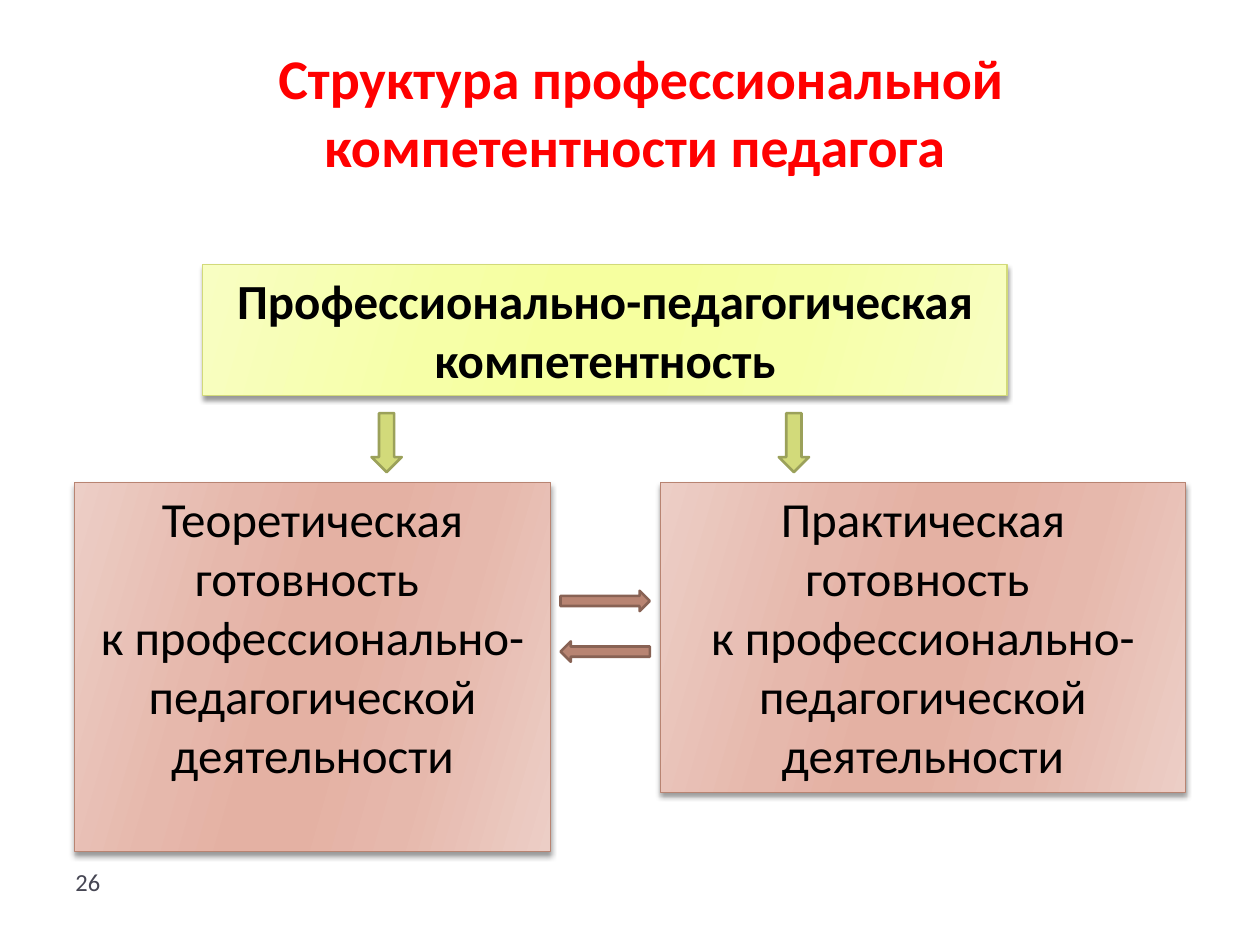
from lxml import etree
from pptx import Presentation
from pptx.dml.color import RGBColor
from pptx.enum.shapes import MSO_SHAPE
from pptx.enum.text import MSO_ANCHOR, MSO_AUTO_SIZE, PP_ALIGN
from pptx.oxml import parse_xml
from pptx.oxml.ns import qn
from pptx.util import Cm, Pt

RECT, DOWN, RIGHT = MSO_SHAPE.RECTANGLE, MSO_SHAPE.DOWN_ARROW, MSO_SHAPE.RIGHT_ARROW
TOP, MIDDLE = MSO_ANCHOR.TOP, MSO_ANCHOR.MIDDLE
LEFT, CENTER = PP_ALIGN.LEFT, PP_ALIGN.CENTER
NS = "http://schemas.openxmlformats.org/drawingml/2006/main"

COLORS = {
    "title": "FF0000", "text": "000000", "number": "464653",
    "lime": "D2DA7A", "lime_edge": "9BA15A",
    "clay": "B88472", "clay_edge": "886254",
}
# Gradient colours from the edge to the middle
FADES = {
    "lime": ["F8FEC2", "F6FFA7", "F6FF9F"],
    "clay": ["ECCEC6", "E6B8AC", "E4B1A3"],
}
STOPS = [0, 30, 45, 55, 73, 100]
SHADOW = (f'<a:outerShdw xmlns:a="{NS}" blurRad="38100" dist="25400" dir="5400000" '
          'rotWithShape="0"><a:srgbClr val="000000"><a:alpha val="40000"/>'
          '</a:srgbClr></a:outerShdw>')


def write(shape, text, size=28, color="text", bold=False, align=CENTER, anchor=TOP):
    frame = shape.text_frame
    frame.word_wrap = True
    frame.auto_size = MSO_AUTO_SIZE.NONE
    frame.vertical_anchor = anchor
    frame.text = text
    for para in frame.paragraphs:
        para.alignment = align
        font = para.runs[0].font
        font.name, font.size, font.bold = "Calibri", Pt(size), bold
        font.color.rgb = RGBColor.from_string(COLORS[color])


def draw(kind, place, edge, width):
    shape = slide.shapes.add_shape(kind, *[Cm(n) for n in place])
    shape.shadow.inherit = False
    shape.line.color.rgb = RGBColor.from_string(COLORS[edge])
    shape.line.width = Pt(width)
    return shape


prs = Presentation()
prs.slide_width, prs.slide_height = Cm(25.4), Cm(19.05)
slide = prs.slides.add_slide(prs.slide_layouts[5])

# Title
title = slide.shapes.title
title.left, title.top, title.width, title.height = Cm(1.3), Cm(0.74), Cm(23), Cm(3)
write(title, " Структура профессиональной компетентности педагога",
      size=32, color="title", bold=True, anchor=MIDDLE)

# Boxes with gradient and shadow
ready = " готовность \nк профессионально-педагогической деятельности"
boxes = [
    ("Профессионально-педагогическая компетентность", (4.09, 5.33, 16.21, 2.64), "lime", True),
    ("Теоретическая" + ready, (1.5, 9.73, 9.6, 7.44), "clay", False),
    ("Практическая" + ready, (13.31, 9.73, 10.59, 6.25), "clay", False),
]
for text, place, tone, bold in boxes:
    box = draw(RECT, place, tone, 0.75)
    box.fill.gradient()
    box.fill.gradient_angle = 344
    props = box._element.spPr
    stops = props.find(".//" + qn("a:gsLst"))
    for old in list(stops):
        stops.remove(old)
    for pos, color in zip(STOPS, FADES[tone] + FADES[tone][::-1]):
        stop = etree.SubElement(stops, qn("a:gs"), pos=str(pos * 1000))
        etree.SubElement(stop, qn("a:srgbClr"), val=color)
    props.find(qn("a:effectLst")).append(parse_xml(SHADOW))
    write(box, text, bold=bold)

# Block arrows
arrows = [
    (DOWN, (7.49, 8.33, 0.61, 1.19), "lime", 0),
    (DOWN, (15.7, 8.33, 0.61, 1.19), "lime", 0),
    (RIGHT, (11.3, 11.91, 1.8, 0.41), "clay", 0),
    (RIGHT, (11.3, 12.93, 1.8, 0.41), "clay", 180),
]
for kind, place, tone, turn in arrows:
    arrow = draw(kind, place, tone + "_edge", 1.5)
    arrow.fill.solid()
    arrow.fill.fore_color.rgb = RGBColor.from_string(COLORS[tone])
    arrow.rotation = turn

# Slide number
number = slide.shapes.add_textbox(Cm(1.27), Cm(17.35), Cm(5.92), Cm(1.32))
write(number, "26", size=14, color="number", align=LEFT)

prs.save("out.pptx")
